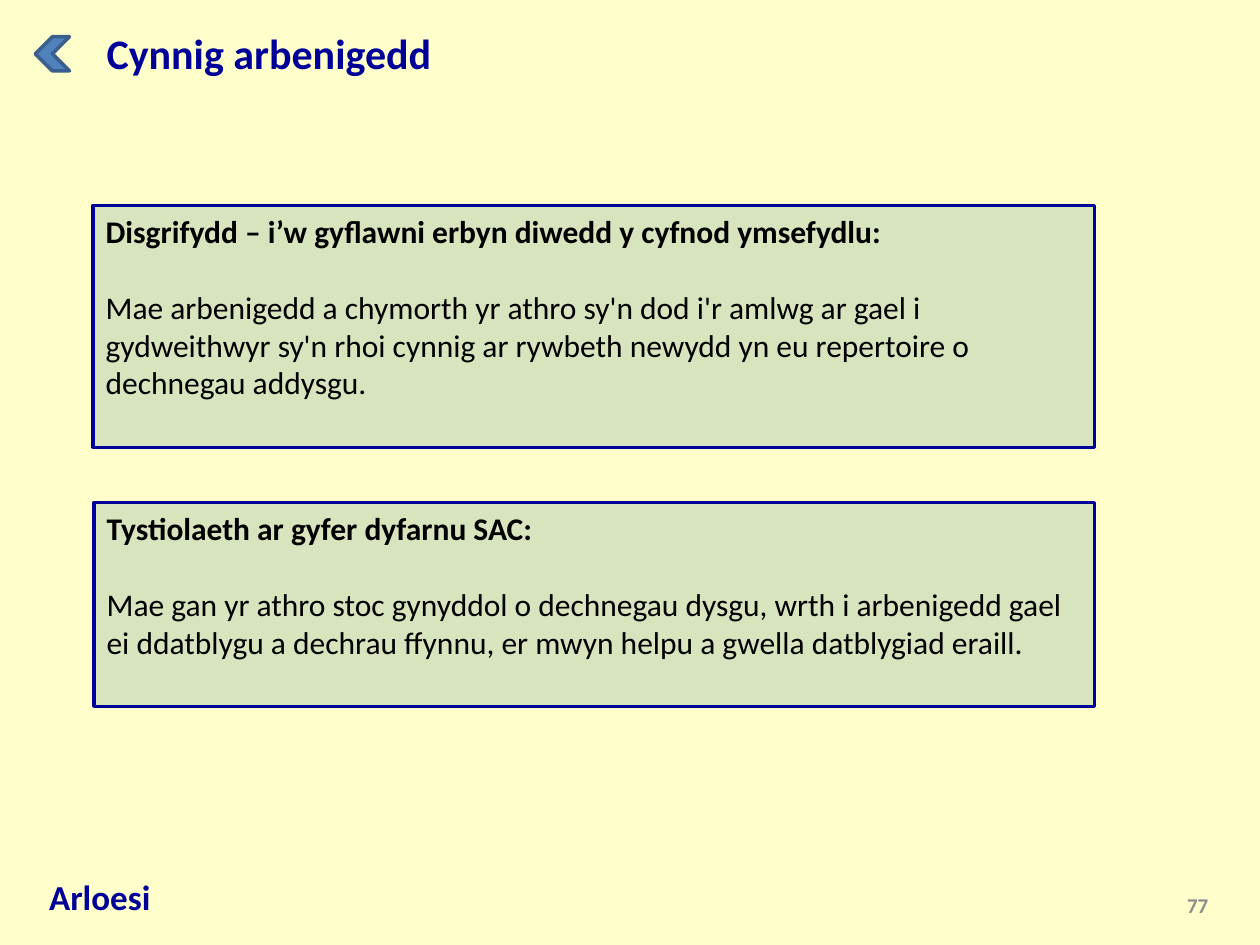
from dataclasses import dataclass

from pptx import Presentation
from pptx.dml.color import RGBColor
from pptx.enum.shapes import MSO_SHAPE as Shape
from pptx.enum.text import MSO_ANCHOR as Anchor, PP_ALIGN as Align
from pptx.util import Cm, Pt


@dataclass(frozen=True)
class Theme:
    font: str = "Calibri"
    background: str = "FFFFCC"
    navy: str = "000099"
    black: str = "000000"
    grey: str = "8C8C8C"
    panel: str = "D7E4BD"
    arrow: str = "4F81BD"
    arrow_line: str = "3A5F8C"
    title_size: int = 24
    footer_size: int = 20
    body_size: int = 18
    number_size: int = 12
    line_width: int = 2
    heading_gap: int = 22


THEME = Theme()


def rgb(value):
    return RGBColor.from_string(value)


def write(paragraph, text, *, size, color, bold=False, align=Align.LEFT, after=0):
    paragraph.alignment = align
    paragraph.space_after = Pt(after)
    run = paragraph.add_run()
    run.text = text
    run.font.name = THEME.font
    run.font.size = Pt(size)
    run.font.bold = bold
    run.font.color.rgb = rgb(color)


def add_label(slide, box, text, anchor=Anchor.TOP, **text_format):
    frame = slide.shapes.add_textbox(*map(Cm, box)).text_frame
    frame.word_wrap = True
    frame.vertical_anchor = anchor
    write(frame.paragraphs[0], text, **text_format)


def add_outlined(slide, kind, box, fill, line):
    shape = slide.shapes.add_shape(kind, *map(Cm, box))
    shape.shadow.inherit = False
    shape.fill.solid()
    shape.fill.fore_color.rgb = rgb(fill)
    shape.line.color.rgb = rgb(line)
    shape.line.width = Pt(THEME.line_width)
    return shape


def add_panel(slide, box, heading, body):
    panel = add_outlined(slide, Shape.RECTANGLE, box, THEME.panel, THEME.navy)
    frame = panel.text_frame
    frame.word_wrap = True
    frame.vertical_anchor = Anchor.TOP
    style = dict(size=THEME.body_size, color=THEME.black)
    write(frame.paragraphs[0], heading, bold=True, after=THEME.heading_gap, **style)
    write(frame.add_paragraph(), body, **style)


def add_header(slide, box, title):
    """Place a back arrow at the left of the box and the title beside it."""
    left, top, width, height = box
    side, indent = 0.69, 1.19
    arrow_box = (left, top + 0.31, side, side)
    arrow = add_outlined(slide, Shape.CHEVRON, arrow_box, THEME.arrow, THEME.arrow_line)
    arrow.rotation = 180
    add_label(slide, (left + indent, top, width - indent, height), title,
              size=THEME.title_size, color=THEME.navy, bold=True)


def add_footer(slide, box, section, number):
    """Place the section name at the left and the page number at the right."""
    left, top, width, height = box
    number_width = 5.92
    add_label(slide, box, section, size=THEME.footer_size, color=THEME.navy, bold=True)
    number_box = (left + width - number_width, top + 0.2, number_width, height - 0.1)
    add_label(slide, number_box, number, anchor=Anchor.MIDDLE, align=Align.RIGHT,
              size=THEME.number_size, color=THEME.grey, bold=True)


def main():
    presentation = Presentation()
    presentation.slide_width, presentation.slide_height = Cm(25.4), Cm(19.05)
    slide = presentation.slides.add_slide(presentation.slide_layouts[6])
    slide.background.fill.solid()
    slide.background.fill.fore_color.rgb = rgb(THEME.background)

    add_header(slide, (0.71, 0.43, 16.86, 1.27), "Cynnig arbenigedd")
    add_panel(
        slide, (1.88, 4.14, 20.19, 4.88),
        "Disgrifydd – i’w gyflawni erbyn diwedd y cyfnod ymsefydlu:",
        "Mae arbenigedd a chymorth yr athro sy'n dod i'r amlwg ar gael i "
        "gydweithwyr sy'n rhoi cynnig ar rywbeth newydd yn eu repertoire o "
        "dechnegau addysgu.")
    add_panel(
        slide, (1.9, 10.13, 20.17, 4.11),
        "Tystiolaeth ar gyfer dyfarnu SAC:",
        "Mae gan yr athro stoc gynyddol o dechnegau dysgu, wrth i arbenigedd gael "
        "ei ddatblygu a dechrau ffynnu, er mwyn helpu a gwella datblygiad eraill.")
    add_footer(slide, (0.74, 17.53, 23.87, 1.12), "Arloesi", "77")

    presentation.save("out.pptx")


if __name__ == "__main__":
    main()
